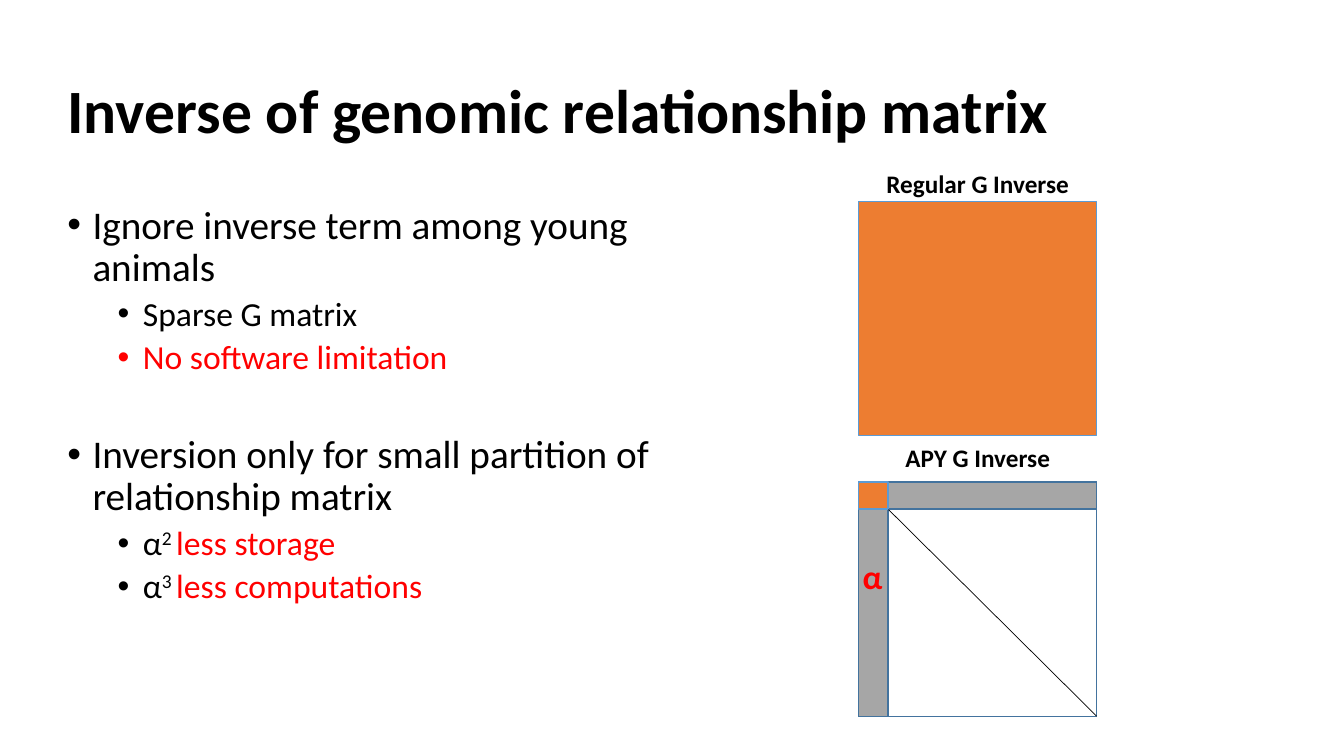
from lxml.etree import SubElement
from pptx import Presentation
from pptx.dml.color import RGBColor
from pptx.enum.shapes import MSO_CONNECTOR as CONNECTOR, MSO_SHAPE as SHAPE
from pptx.enum.text import MSO_ANCHOR as ANCHOR, PP_ALIGN as ALIGN
from pptx.oxml.ns import qn
from pptx.util import Pt

BLACK, WHITE, RED = "000000", "FFFFFF", "FF0000"
ORANGE, GRAY, BLUE, DARK_BLUE = "ED7D31", "A6A6A6", "5B9BD5", "43739E"

LEVELS = [
    {"size": 28, "margin": 18, "before": 10},
    {"size": 24, "margin": 54, "before": 5},
]
BULLETS = [
    (0, 0, [("Ignore inverse term among young animals", BLACK, False)]),
    (1, 0, [("Sparse G matrix", BLACK, False)]),
    (1, 0, [("No software limitation", RED, False)]),
    (0, 31.4, [("Inversion only for small partition of relationship matrix", BLACK, False)]),
    (1, 0, [("α", BLACK, False), ("2 ", BLACK, True), ("less storage", RED, False)]),
    (1, 0, [("α", BLACK, False), ("3 ", BLACK, True), ("less computations", RED, False)]),
]


def color(value):
    """Turn a hex string into a colour."""
    return RGBColor.from_string(value)


def add_run(paragraph, text, size, fill, bold=False):
    """Append a formatted run to a paragraph."""
    run = paragraph.add_run()
    run.text = text
    formats = {"name": "Calibri", "size": Pt(size), "bold": bold}
    for name, value in formats.items():
        setattr(run.font, name, value)
    run.font.color.rgb = color(fill)
    return run


def add_frame(slide, box, **formats):
    """Add a text box and return its text frame."""
    frame = slide.shapes.add_textbox(*map(Pt, box)).text_frame
    for name, value in {"word_wrap": True, **formats}.items():
        setattr(frame, name, value)
    return frame


def add_label(slide, box, text, size, fill=BLACK, align=ALIGN.LEFT, spacing=1.0, **formats):
    """Add one line of bold text."""
    paragraph = add_frame(slide, box, **formats).paragraphs[0]
    paragraph.alignment = align
    paragraph.line_spacing = spacing
    add_run(paragraph, text, size, fill, True)


def add_block(slide, box, fill, line):
    """Add a filled and outlined rectangle."""
    shape = slide.shapes.add_shape(SHAPE.RECTANGLE, *map(Pt, box))
    shape.shadow.inherit = False
    shape.fill.solid()
    shape.fill.fore_color.rgb = color(fill)
    shape.line.color.rgb = color(line)
    shape.line.width = Pt(1)


def add_bullets(slide, box):
    """Fill a box with the two-level bullet list."""
    frame = add_frame(slide, box)
    for index, (depth, gap, runs) in enumerate(BULLETS):
        paragraph = frame.add_paragraph() if index else frame.paragraphs[0]
        level = LEVELS[depth]
        formats = {"level": depth, "line_spacing": 0.9, "space_before": Pt(level["before"] + gap)}
        for name, value in formats.items():
            setattr(paragraph, name, value)
        properties = paragraph._p.get_or_add_pPr()
        properties.set("marL", str(Pt(level["margin"])))
        properties.set("indent", str(Pt(-18)))
        SubElement(properties, qn("a:buFont")).set("typeface", "Arial")
        SubElement(properties, qn("a:buChar")).set("char", "•")
        for text, fill, raised in runs:
            run = add_run(paragraph, text, level["size"], fill)
            if raised:
                run.font._element.set("baseline", "30000")


def add_regular_inverse(slide, left, top, width, height):
    """Draw the dense inverse under its heading."""
    add_label(slide, (left, top - 27.4, width, 29), "Regular G Inverse", 18, align=ALIGN.CENTER)
    add_block(slide, (left, top, width, height), ORANGE, BLUE)


def add_apy_inverse(slide, left, top, width, height):
    """Draw the sparse inverse with its core, borders and diagonal."""
    core_width, core_height = 20.9, 19.4
    add_block(slide, (left, top, width, height), WHITE, DARK_BLUE)
    add_block(slide, (left, top, core_width, height), GRAY, DARK_BLUE)
    add_block(slide, (left, top, width, core_height), GRAY, DARK_BLUE)
    ends = (left + core_width, top + core_height, left + width, top + height)
    diagonal = slide.shapes.add_connector(CONNECTOR.STRAIGHT, *map(Pt, ends))
    diagonal.line.color.rgb = color(BLACK)
    diagonal.line.width = Pt(0.5)
    SubElement(diagonal._element.spPr, qn("a:effectLst"))
    add_block(slide, (left, top, core_width, core_height), ORANGE, BLUE)
    add_label(slide, (left - 4.3, top + 49.7, 28, 36), "α", 24, RED, word_wrap=False)
    add_label(slide, (left, top - 31.7, width, 29), "APY G Inverse", 18, align=ALIGN.CENTER)


def main():
    """Build and save the slide."""
    presentation = Presentation()
    presentation.slide_width, presentation.slide_height = Pt(960), Pt(540)
    slide = presentation.slides.add_slide(presentation.slide_layouts[6])
    add_label(slide, (41, 28.8, 828, 104.4), "Inverse of genomic relationship matrix", 44,
              spacing=0.9, vertical_anchor=ANCHOR.MIDDLE)
    add_bullets(slide, (41, 143.3, 430.6, 342.7))
    add_regular_inverse(slide, 613.4, 144, 170, 167)
    add_apy_inverse(slide, 613.4, 344.2, 170, 167.4)
    presentation.save("out.pptx")


if __name__ == "__main__":
    main()
